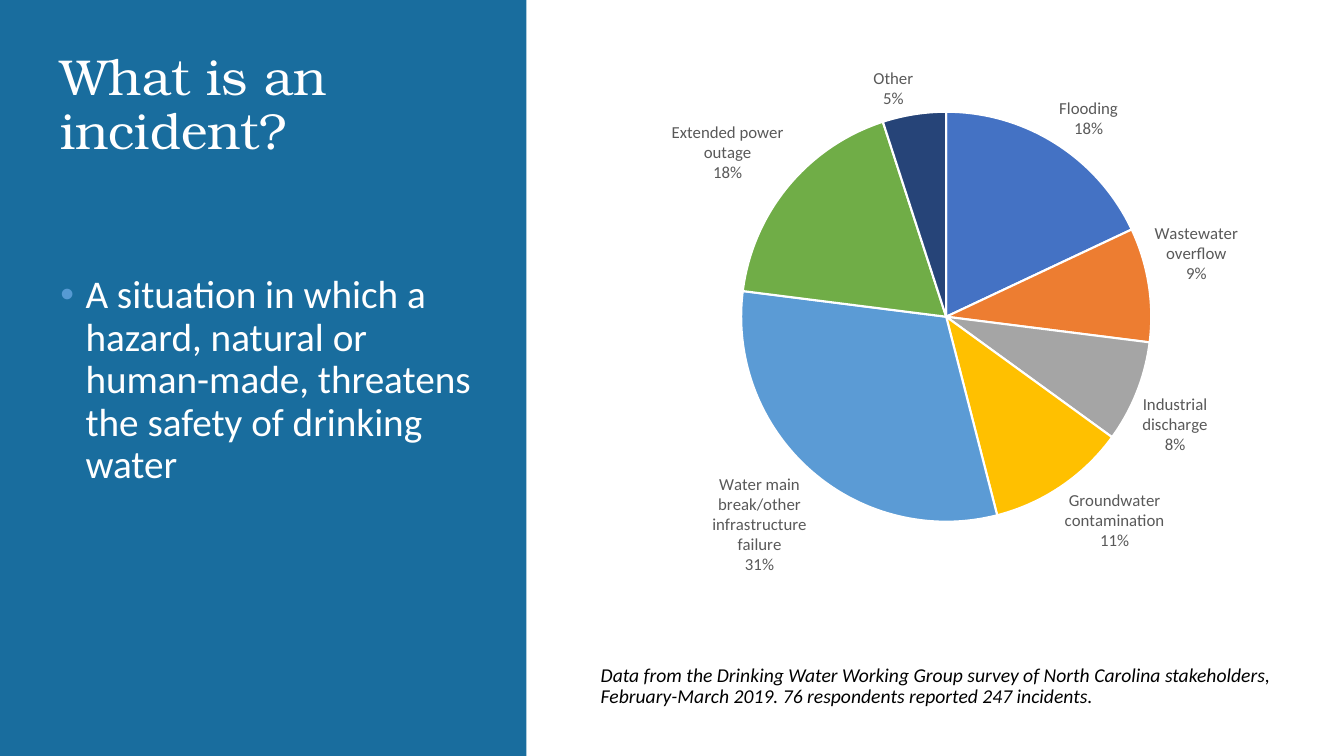
from dataclasses import dataclass

from lxml.etree import SubElement
from pptx import Presentation
from pptx.chart.data import CategoryChartData
from pptx.dml.color import RGBColor
from pptx.enum.chart import XL_CHART_TYPE as ChartType, XL_LABEL_POSITION as LabelPosition
from pptx.enum.shapes import MSO_SHAPE as ShapeKind
from pptx.enum.text import MSO_ANCHOR as Anchor
from pptx.oxml.ns import qn
from pptx.util import Inches, Pt


@dataclass(frozen=True)
class Theme:
    panel: str = "196D9E"
    white: str = "FFFFFF"
    black: str = "000000"
    label: str = "595959"
    bullet: str = "569AD3"
    heading_font: str = "TeX Gyre Bonum"
    body_font: str = "Calibri"
    title_size: int = 36
    body_size: int = 28
    caption_size: int = 14
    label_size: int = 12


THEME = Theme()

INCIDENTS = [
    ("Flooding", 18, "4472C4"),
    ("Wastewater overflow", 9, "ED7D31"),
    ("Industrial discharge", 8, "A5A5A5"),
    ("Groundwater contamination", 11, "FFC000"),
    ("Water main break/other infrastructure failure", 31, "5B9BD5"),
    ("Extended power outage", 18, "70AD47"),
    ("Other", 5, "264478"),
]


def rgb(color):
    return RGBColor.from_string(color)


def style_font(font, name, size, color):
    font.name = name
    font.size = Pt(size)
    font.color.rgb = rgb(color)


def add_panel(slide, left, top, width, height):
    panel = slide.shapes.add_shape(
        ShapeKind.RECTANGLE, Inches(left), Inches(top), Inches(width), Inches(height))
    panel.shadow.inherit = False
    panel.fill.solid()
    panel.fill.fore_color.rgb = rgb(THEME.panel)
    panel.line.fill.background()


def add_text(slide, box, text, font_name, size, color, anchor=Anchor.TOP):
    shape = slide.shapes.add_textbox(*(Inches(length) for length in box))
    text_frame = shape.text_frame
    text_frame.word_wrap = True
    text_frame.vertical_anchor = anchor
    text_frame.text = text
    paragraph = text_frame.paragraphs[0]
    paragraph.line_spacing = 0.9
    style_font(paragraph.runs[0].font, font_name, size, color)
    return paragraph


def add_bullet(paragraph, color, indent):
    properties = paragraph._p.get_or_add_pPr()
    properties.set("marL", str(Inches(indent)))
    properties.set("indent", str(-Inches(indent)))
    bullet_color = SubElement(properties, qn("a:buClr"))
    SubElement(bullet_color, qn("a:srgbClr")).set("val", color)
    SubElement(properties, qn("a:buFont")).set("typeface", "Arial")
    SubElement(properties, qn("a:buChar")).set("char", "•")


def place_plot(chart, x, y, w, h):
    plot_area = chart._chartSpace.chart.plotArea
    for layout in plot_area.findall(qn("c:layout")):
        plot_area.remove(layout)
    layout = SubElement(plot_area, qn("c:layout"))
    plot_area.insert(0, layout)
    manual = SubElement(layout, qn("c:manualLayout"))
    settings = {"layoutTarget": "inner", "xMode": "edge", "yMode": "edge",
                "x": x, "y": y, "w": w, "h": h}
    for tag, value in settings.items():
        SubElement(manual, qn(f"c:{tag}")).set("val", str(value))


def add_incident_pie(slide, left, top, width, height):
    categories, values, colors = zip(*INCIDENTS)
    data = CategoryChartData()
    data.categories = categories
    data.add_series("Series 1", values)
    chart = slide.shapes.add_chart(
        ChartType.PIE, Inches(left), Inches(top), Inches(width), Inches(height), data).chart
    chart.has_title = False
    chart.has_legend = False
    style_font(chart.font, THEME.body_font, THEME.label_size, THEME.label)
    place_plot(chart, 0.22, 0.1, 0.6, 0.74)

    plot = chart.plots[0]
    plot.vary_by_categories = True
    for index, color in enumerate(colors):
        slice_format = plot.series[0].points[index].format
        slice_format.fill.solid()
        slice_format.fill.fore_color.rgb = rgb(color)
        slice_format.line.color.rgb = rgb(THEME.white)
        slice_format.line.width = Pt(1.5)

    plot.has_data_labels = True
    labels = plot.data_labels
    labels.show_category_name = True
    labels.show_percentage = True
    labels.show_value = False
    labels.number_format = "0%"
    labels.number_format_is_linked = False
    labels.position = LabelPosition.OUTSIDE_END
    style_font(labels.font, THEME.body_font, THEME.label_size, THEME.label)
    separator = SubElement(labels._element, qn("c:separator"))
    separator.text = "\n"
    labels._element.find(qn("c:showBubbleSize")).addnext(separator)


def main():
    presentation = Presentation()
    presentation.slide_width = Inches(13.33)
    presentation.slide_height = Inches(7.5)
    slide = presentation.slides.add_slide(presentation.slide_layouts[6])

    add_panel(slide, 0, 0, 5.22, 7.5)
    add_text(slide, (0.5, 0.19, 4.28, 1.73), "What is an incident?",
             THEME.heading_font, THEME.title_size, THEME.white, Anchor.MIDDLE)
    definition = add_text(
        slide, (0.5, 2.68, 4.5, 4.28),
        "A situation in which a hazard, natural or human-made, "
        "threatens the safety of drinking water",
        THEME.body_font, THEME.body_size, THEME.white)
    add_bullet(definition, THEME.bullet, 0.25)
    add_incident_pie(slide, 5.86, 0.53, 6.78, 5.56)
    caption = add_text(
        slide, (5.86, 6.55, 7.24, 0.54),
        "Data from the Drinking Water Working Group survey of North Carolina stakeholders, "
        "February-March 2019. 76 respondents reported 247 incidents.",
        THEME.body_font, THEME.caption_size, THEME.black)
    caption.runs[0].font.italic = True

    presentation.save("out.pptx")


if __name__ == "__main__":
    main()
